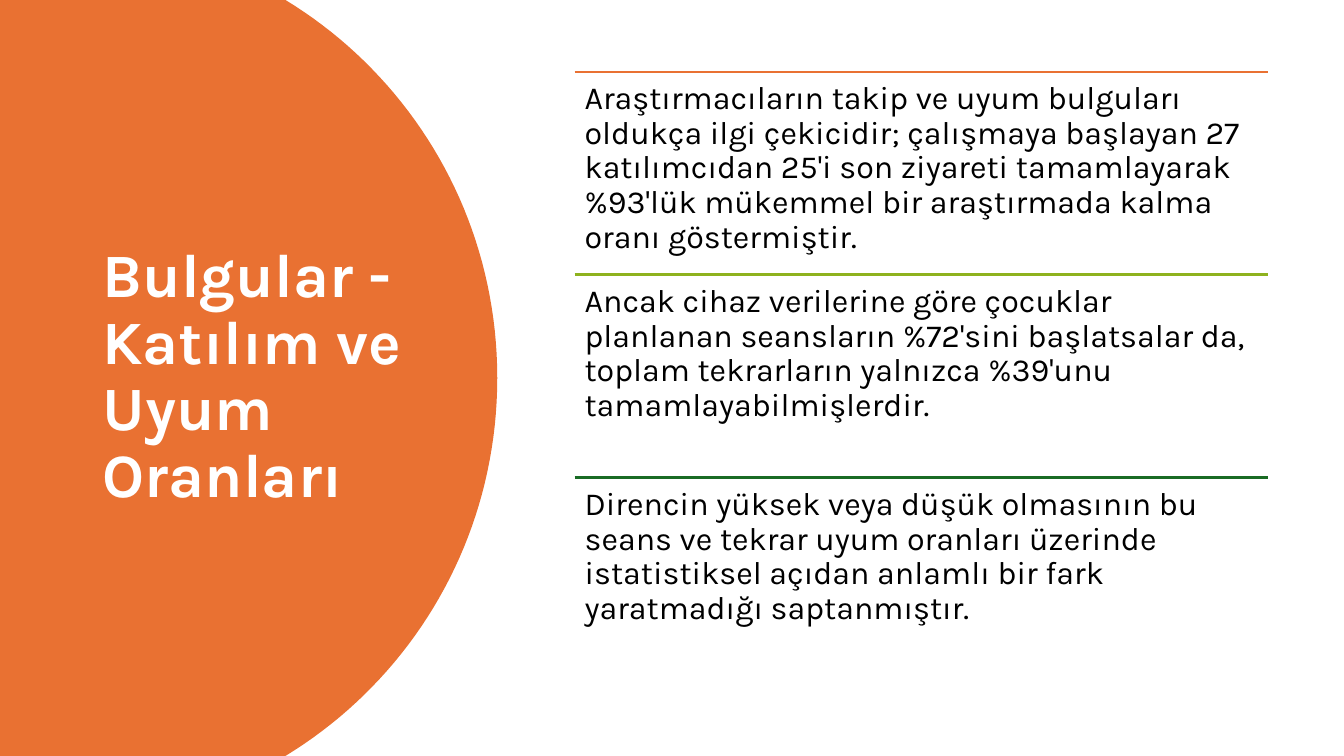
from pptx import Presentation
from pptx.dml.color import RGBColor
from pptx.enum.shapes import MSO_CONNECTOR
from pptx.enum.text import MSO_ANCHOR
from pptx.oxml.ns import qn
from pptx.util import Inches, Pt
from lxml import etree

STRAIGHT = MSO_CONNECTOR.STRAIGHT
TOP, MIDDLE = MSO_ANCHOR.TOP, MSO_ANCHOR.MIDDLE
ORANGE = RGBColor(0xE9, 0x71, 0x32)
LIME = RGBColor(0x8E, 0xB2, 0x1E)
GREEN = RGBColor(0x19, 0x6B, 0x24)
WHITE = RGBColor(0xFF, 0xFF, 0xFF)
BLACK = RGBColor(0, 0, 0)
FONT = "Karla"
WIDTH, HEIGHT = 13.33, 7.5
CURVE_STEPS = 40

TITLE = "Bulgular - Katılım ve Uyum Oranları"
FINDINGS = [
    (ORANGE, "Araştırmacıların takip ve uyum bulguları oldukça ilgi çekicidir; "
             "çalışmaya başlayan 27 katılımcıdan 25'i son ziyareti tamamlayarak "
             "%93'lük mükemmel bir araştırmada kalma oranı göstermiştir."),
    (LIME, "Ancak cihaz verilerine göre çocuklar planlanan seansların %72'sini "
           "başlatsalar da, toplam tekrarların yalnızca %39'unu "
           "tamamlayabilmişlerdir."),
    (GREEN, "Direncin yüksek veya düşük olmasının bu seans ve tekrar uyum "
            "oranları üzerinde istatistiksel açıdan anlamlı bir fark "
            "yaratmadığı saptanmıştır."),
]


def add_text(s, box, text, size, color, anchor, inset, bold=False, after=0):
    tb = s.shapes.add_textbox(*(Inches(v) for v in box))
    tf = tb.text_frame
    tf.word_wrap = True
    tf.vertical_anchor = anchor
    tf.margin_left = tf.margin_right = Inches(0.1)
    tf.margin_top = tf.margin_bottom = Inches(inset)
    p = tf.paragraphs[0]
    p.text = text
    p.line_spacing = 0.9
    p.space_after = Pt(after)
    p.font.name = FONT
    p.font.size = Pt(size)
    p.font.bold = bold
    p.font.color.rgb = color


def bezier(a, b, c, d, t):
    u = 1 - t
    return u**3 * a + 3 * u * u * t * b + 3 * u * t * t * c + t**3 * d


def add_title_panel(s, left, top, width, height):
    middle = height / 2
    upper = []
    for i in range(CURVE_STEPS + 1):
        t = i / CURVE_STEPS
        x = width * bezier(0.574, 0.83, 1, 1, t)
        y = middle * bezier(0, 0.205, 0.576, 1, t)
        upper.append((left + x, top + y))
    lower = [(x, 2 * (top + middle) - y) for x, y in reversed(upper[:-1])]
    fb = s.shapes.build_freeform(Inches(left), Inches(top))
    outline = upper + lower + [(left, top + height)]
    fb.add_line_segments([(Inches(x), Inches(y)) for x, y in outline], close=True)
    sp = fb.convert_to_shape()
    sp.shadow.inherit = False
    sp.fill.solid()
    sp.fill.fore_color.rgb = ORANGE
    sp.line.fill.background()
    box = (left + 0.92, top + 0.7, width - 1.7, height - 1.41)
    add_text(s, box, TITLE, 44, WHITE, MIDDLE, 0.05, bold=True)


def add_findings(s, left, top, width, height):
    row = height / len(FINDINGS)
    for i, (color, text) in enumerate(FINDINGS):
        y = top + i * row
        rule = s.shapes.add_connector(
            STRAIGHT, Inches(left), Inches(y), Inches(left + width), Inches(y))
        rule.line.color.rgb = color
        rule.line.width = Pt(1.5)
        etree.SubElement(rule._element.spPr, qn("a:effectLst"))
        add_text(s, (left, y, width, row), text, 23, BLACK, TOP, 0.1, after=8)


def main():
    prs = Presentation()
    prs.slide_width, prs.slide_height = Inches(WIDTH), Inches(HEIGHT)
    s = prs.slides.add_slide(prs.slide_layouts[6])
    add_title_panel(s, 0, 0, 0.37 * WIDTH, HEIGHT)
    add_findings(s, 5.7, 0.71, 6.88, 6.04)
    prs.save("out.pptx")


if __name__ == "__main__":
    main()
